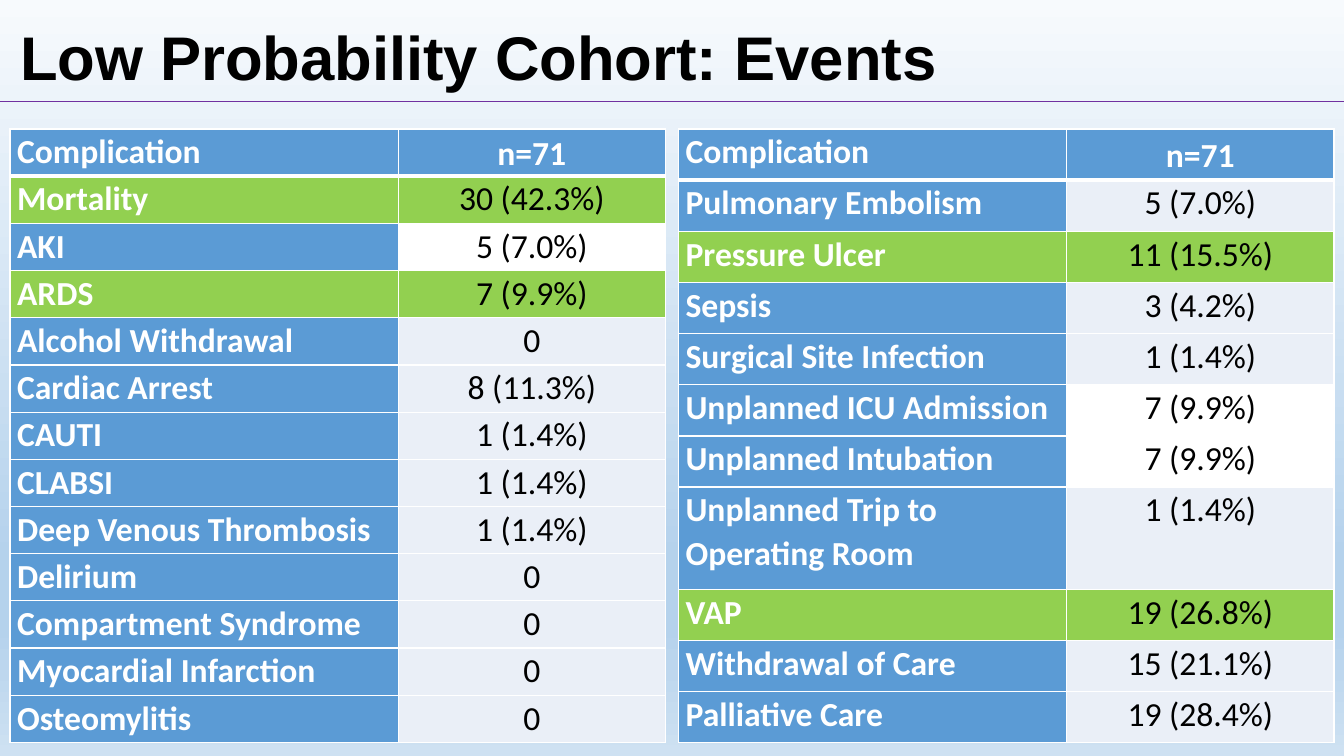
from copy import deepcopy

from lxml import etree
from pptx import Presentation
from pptx.dml.color import RGBColor
from pptx.enum.shapes import MSO_CONNECTOR
from pptx.enum.text import MSO_ANCHOR, MSO_AUTO_SIZE, PP_ALIGN
from pptx.oxml.ns import qn
from pptx.util import Inches, Pt

STRAIGHT = MSO_CONNECTOR.STRAIGHT
TOP, MIDDLE = MSO_ANCHOR.TOP, MSO_ANCHOR.MIDDLE
LEFT, CENTER = PP_ALIGN.LEFT, PP_ALIGN.CENTER
NO_AUTOFIT = MSO_AUTO_SIZE.NONE

BLACK = RGBColor(0x00, 0x00, 0x00)
WHITE = RGBColor(0xFF, 0xFF, 0xFF)
BLUE = RGBColor(0x5B, 0x9B, 0xD5)
GREEN = RGBColor(0x92, 0xD0, 0x50)
PALE = RGBColor(0xEA, 0xEF, 0xF7)
PURPLE = RGBColor(0x70, 0x30, 0xA0)
BACKGROUND_STOPS = [
    (0, RGBColor(0xF7, 0xFA, 0xFD)),
    (0.74, RGBColor(0xB5, 0xD2, 0xEC)),
    (0.83, RGBColor(0xB5, 0xD2, 0xEC)),
    (1, RGBColor(0xCE, 0xE1, 0xF2)),
]

TITLE = "Low Probability Cohort: Events"
HEADER = ("Complication", "n=71")
LEFT_EVENTS = [
    ("Mortality", "30 (42.3%)"),
    ("AKI", "5 (7.0%)"),
    ("ARDS", "7 (9.9%)"),
    ("Alcohol Withdrawal", "0"),
    ("Cardiac Arrest", "8 (11.3%)"),
    ("CAUTI", "1 (1.4%)"),
    ("CLABSI", "1 (1.4%)"),
    ("Deep Venous Thrombosis", "1 (1.4%)"),
    ("Delirium", "0"),
    ("Compartment Syndrome", "0"),
    ("Myocardial Infarction", "0"),
    ("Osteomylitis", "0"),
]
RIGHT_EVENTS = [
    ("Pulmonary Embolism", "5 (7.0%)"),
    ("Pressure Ulcer", "11 (15.5%)"),
    ("Sepsis", "3 (4.2%)"),
    ("Surgical Site Infection", "1 (1.4%)"),
    ("Unplanned ICU Admission", "7 (9.9%)"),
    ("Unplanned Intubation", "7 (9.9%)"),
    ("Unplanned Trip to Operating Room", "1 (1.4%)"),
    ("VAP", "19 (26.8%)"),
    ("Withdrawal of Care", "15 (21.1%)"),
    ("Palliative Care", "19 (28.4%)"),
]
GREEN_EVENTS = {"Mortality", "ARDS", "Pressure Ulcer", "VAP"}
WHITE_EVENTS = {"AKI", "Unplanned ICU Admission", "Unplanned Intubation"}
DOUBLE_HEIGHT_EVENTS = {"Unplanned Trip to Operating Room"}

SLIDE_WIDTH, SLIDE_HEIGHT = Inches(13.33), Inches(7.5)
MARGIN = Inches(0.1)
RULE_TOP = Inches(1.01)
TABLE_TOP, TABLE_HEIGHT = Inches(1.28), Inches(6.09)
COLUMN_WIDTHS = (Inches(3.85), Inches(2.65))
TABLE_WIDTH = sum(COLUMN_WIDTHS)
CELL_FORMAT = {"margin_left": Inches(0.07), "margin_right": Inches(0.07),
               "margin_top": 0, "margin_bottom": 0}


def apply_format(target, values):
    for name, value in values.items():
        setattr(target, name, value)


def paint_background(slide):
    fill = slide.background.fill
    fill.gradient()
    fill.gradient_angle = 270
    stop_list = slide.element.find(".//" + qn("a:gsLst"))
    while len(stop_list) < len(BACKGROUND_STOPS):
        stop_list.append(deepcopy(stop_list[0]))
    for stop, (position, color) in zip(fill.gradient_stops, BACKGROUND_STOPS):
        stop.position = position
        stop.color.rgb = color


def add_title(slide):
    title = slide.shapes.title
    apply_format(title, {"left": MARGIN, "top": Inches(0.14),
                         "width": Inches(11.5), "height": Inches(0.92)})
    frame = title.text_frame
    apply_format(frame, {"text": TITLE, "word_wrap": True,
                         "auto_size": NO_AUTOFIT, "vertical_anchor": MIDDLE})
    paragraph = frame.paragraphs[0]
    apply_format(paragraph, {"alignment": LEFT, "line_spacing": 0.9})
    font = paragraph.runs[0].font
    apply_format(font, {"name": "Arial", "size": Pt(44), "bold": True})
    font.color.rgb = BLACK


def add_title_rule(slide):
    rule = slide.shapes.add_connector(STRAIGHT, 0, RULE_TOP, SLIDE_WIDTH, RULE_TOP)
    rule.line.color.rgb = PURPLE
    rule.line.width = Pt(1)
    etree.SubElement(rule.element.spPr, qn("a:effectLst"))


def set_borders(cell, widths):
    """Draw white cell borders; widths maps L, R, T, B to points, in that order."""
    properties = cell._tc.get_or_add_tcPr()
    for index, (side, width) in enumerate(widths.items()):
        line = etree.Element(qn("a:ln" + side), w=str(Pt(width)))
        solid = etree.SubElement(line, qn("a:solidFill"))
        etree.SubElement(solid, qn("a:srgbClr"), val=str(WHITE))
        properties.insert(index, line)


def cell_fill(event, is_label):
    if event in GREEN_EVENTS:
        return GREEN
    if is_label or event == HEADER[0]:
        return BLUE
    return WHITE if event in WHITE_EVENTS else PALE


def border_widths(row):
    if row == 0:
        return {"L": 1, "R": 1, "T": 1, "B": 3}
    if row == 1:
        return {"L": 1, "R": 1, "B": 1}
    return {"L": 1, "R": 1, "T": 1, "B": 1}


def fill_cell(cell, text, event, row, column):
    is_label, is_header = column == 0, row == 0
    cell.text = text
    apply_format(cell, CELL_FORMAT)
    cell.vertical_anchor = MIDDLE if is_header and not is_label else TOP
    cell.fill.solid()
    cell.fill.fore_color.rgb = cell_fill(event, is_label)
    set_borders(cell, border_widths(row))
    paragraph = cell.text_frame.paragraphs[0]
    apply_format(paragraph, {"alignment": LEFT if is_label else CENTER,
                             "line_spacing": 1.07})
    font = paragraph.runs[0].font
    strong = is_label or is_header
    apply_format(font, {"name": "Calibri", "size": Pt(24), "bold": strong})
    font.color.rgb = WHITE if strong else BLACK


def add_event_table(slide, left, events):
    rows = [HEADER] + events
    units = [2 if event in DOUBLE_HEIGHT_EVENTS else 1 for event, _ in rows]
    table = slide.shapes.add_table(len(rows), len(HEADER), left, TABLE_TOP,
                                   TABLE_WIDTH, TABLE_HEIGHT).table
    table.horz_banding = False
    for column, width in zip(table.columns, COLUMN_WIDTHS):
        column.width = width
    for row, values in enumerate(rows):
        table.rows[row].height = TABLE_HEIGHT * units[row] // sum(units)
        for column, text in enumerate(values):
            fill_cell(table.cell(row, column), text, values[0], row, column)


def main():
    presentation = Presentation()
    presentation.slide_width = SLIDE_WIDTH
    presentation.slide_height = SLIDE_HEIGHT
    slide = presentation.slides.add_slide(presentation.slide_layouts[5])
    paint_background(slide)
    add_title(slide)
    add_title_rule(slide)
    add_event_table(slide, MARGIN, LEFT_EVENTS)
    add_event_table(slide, SLIDE_WIDTH - MARGIN - TABLE_WIDTH, RIGHT_EVENTS)
    presentation.save("out.pptx")


if __name__ == "__main__":
    main()
